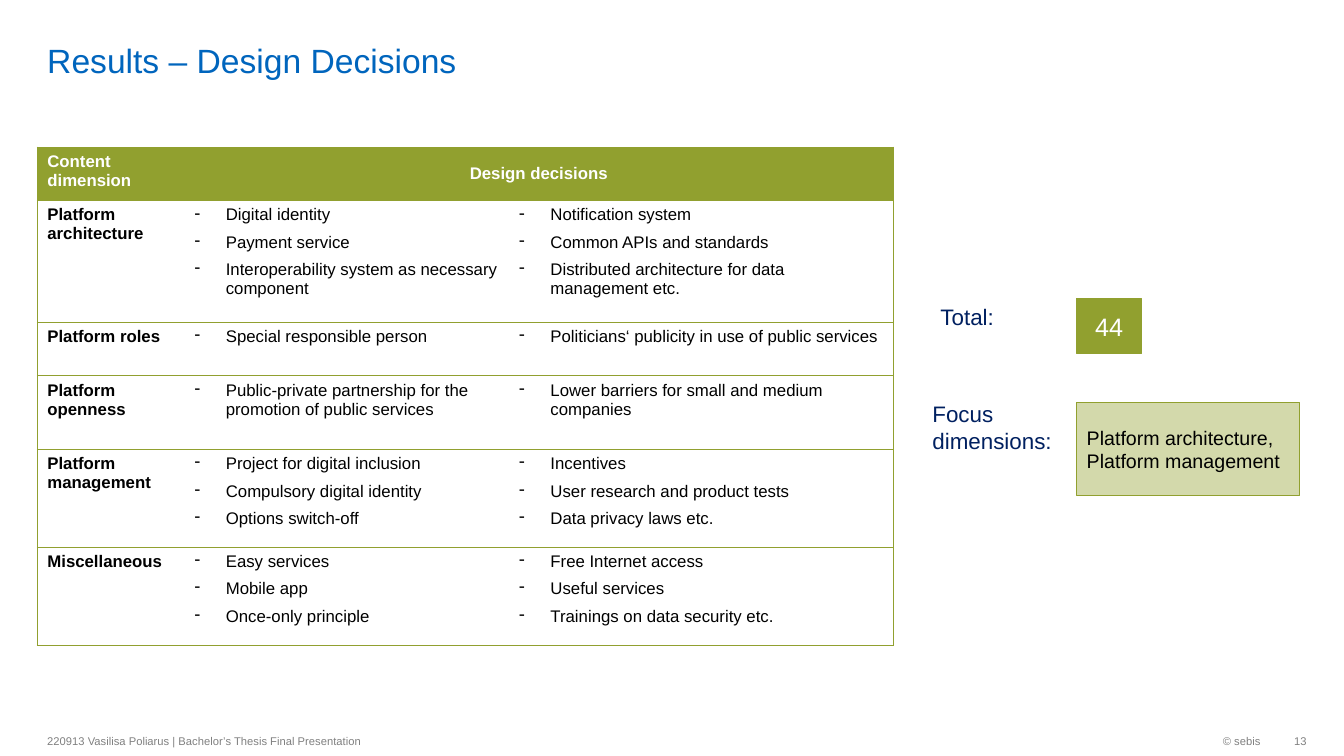
from lxml.etree import SubElement
from pptx import Presentation
from pptx.dml.color import RGBColor
from pptx.enum.shapes import MSO_SHAPE
from pptx.enum.text import MSO_ANCHOR as ANCHOR, PP_ALIGN as ALIGN
from pptx.oxml.ns import qn
from pptx.util import Inches, Pt

OLIVE, BLUE, NAVY, GRAY = "91A02F", "0065BD", "002060", "808080"
BLACK, WHITE = "000000", "FFFFFF"
NO_STYLE = "{2D5ABB26-0587-4C30-8999-92F81FD0307C}"
COLUMN_WIDTHS = [1.46, 3.22, 3.81]
ROW_HEIGHTS = [0.53, 1.21, 0.53, 0.73, 0.97, 0.97]
DECISIONS = [
    ("Platform architecture",
     ["Digital identity", "Payment service", "Interoperability system as necessary component"],
     ["Notification system", "Common APIs and standards",
      "Distributed architecture for data management etc."]),
    ("Platform roles",
     ["Special responsible person"],
     ["Politicians‘ publicity in use of public services"]),
    ("Platform openness",
     ["Public-private partnership for the promotion of public services"],
     ["Lower barriers for small and medium companies"]),
    ("Platform management",
     ["Project for digital inclusion", "Compulsory digital identity", "Options switch-off"],
     ["Incentives", "User research and product tests", "Data privacy laws etc."]),
    ("Miscellaneous",
     ["Easy services", "Mobile app", "Once-only principle"],
     ["Free Internet access", "Useful services", "Trainings on data security etc."]),
]


def rgb(color):
    return RGBColor.from_string(color)


def write(frame, lines, size, color, bold=False, align=ALIGN.LEFT, bulleted=False):
    for index, line in enumerate(lines):
        paragraph = frame.paragraphs[0] if index == 0 else frame.add_paragraph()
        paragraph.text = line
        paragraph.alignment = align
        if bulleted:
            paragraph.space_after = Pt(6)
            add_dash(paragraph)
        font = paragraph.runs[0].font
        formats = {"name": "Arial", "size": Pt(size), "bold": bold}
        for key, value in formats.items():
            setattr(font, key, value)
        font.color.rgb = rgb(color)


def add_dash(paragraph):
    properties = paragraph._p.get_or_add_pPr()
    properties.set("marL", str(Inches(0.31)))
    properties.set("indent", str(Inches(-0.31)))
    SubElement(properties, qn("a:buChar"), char="-")


def add_label(slide, place, lines, size, color, align=ALIGN.LEFT, wrap=True, **frame_format):
    frame = slide.shapes.add_textbox(*map(Inches, place)).text_frame
    frame.word_wrap = wrap
    for key, value in frame_format.items():
        setattr(frame, key, value)
    write(frame, lines, size, color, align=align)


def add_box(slide, place, lines, size, color, align=ALIGN.LEFT, opacity=100):
    box = slide.shapes.add_shape(MSO_SHAPE.RECTANGLE, *map(Inches, place))
    box.shadow.inherit = False
    box.fill.solid()
    box.fill.fore_color.rgb = rgb(OLIVE)
    if opacity < 100:
        tint = box.fill._xPr.find(qn("a:solidFill"))[0]
        SubElement(tint, qn("a:alpha"), val=str(opacity * 1000))
    box.line.color.rgb = rgb(OLIVE)
    box.line.width = Pt(0.75)
    box.text_frame.vertical_anchor = ANCHOR.MIDDLE
    box.text_frame.word_wrap = True
    write(box.text_frame, lines, size, color, align=align)


def add_borders(cell, sides):
    """Draw olive lines on the given sides, in the order L, R, T, B."""
    properties = cell._tc.get_or_add_tcPr()
    for side in sides:
        line = SubElement(properties, qn(f"a:ln{side}"), w=str(Pt(0.75)))
        fill = SubElement(line, qn("a:solidFill"))
        SubElement(fill, qn("a:srgbClr"), val=OLIVE)


def add_decision_table(slide):
    table = slide.shapes.add_table(
        len(ROW_HEIGHTS), len(COLUMN_WIDTHS), Inches(0.37), Inches(1.46),
        Inches(sum(COLUMN_WIDTHS)), Inches(sum(ROW_HEIGHTS))).table
    table._tbl.tblPr.find(qn("a:tableStyleId")).text = NO_STYLE
    table.horz_banding = False
    for column, width in zip(table.columns, COLUMN_WIDTHS):
        column.width = Inches(width)
    for row, height in zip(table.rows, ROW_HEIGHTS):
        row.height = Inches(height)

    heading = table.cell(0, 1)
    heading.merge(table.cell(0, 2))
    for row_index, row in enumerate(table.rows):
        for column_index, cell in enumerate(row.cells):
            left = "L" if column_index == 0 else ""
            right = "R" if column_index == 2 or cell.is_merge_origin else ""
            add_borders(cell, left + right + "TB")
            if row_index == 0:
                cell.fill.solid()
                cell.fill.fore_color.rgb = rgb(OLIVE)
            else:
                cell.fill.background()

    write(table.cell(0, 0).text_frame, ["Content dimension"], 12, WHITE, bold=True)
    write(heading.text_frame, ["Design decisions"], 12, WHITE, bold=True, align=ALIGN.CENTER)
    heading.vertical_anchor = ANCHOR.MIDDLE
    for row_index, (dimension, *decision_lists) in enumerate(DECISIONS, 1):
        write(table.cell(row_index, 0).text_frame, [dimension], 12, BLACK, bold=True)
        for column_index, decisions in enumerate(decision_lists, 1):
            write(table.cell(row_index, column_index).text_frame, decisions, 12, BLACK,
                  bulleted=True)


def add_summary(slide):
    add_label(slide, (9.23, 2.96, 0.74, 0.37), ["Total:"], 16, NAVY, wrap=False)
    add_box(slide, (10.68, 2.96, 0.64, 0.55), ["44"], 18, WHITE, align=ALIGN.CENTER)
    add_label(slide, (9.15, 3.92, 1.4, 0.64), ["Focus", "dimensions:"], 16, NAVY, wrap=False)
    add_box(slide, (10.68, 3.99, 2.21, 0.93),
            ["Platform architecture,", "Platform management"], 14, BLACK, opacity=40)


def add_footer(slide):
    middle = {"vertical_anchor": ANCHOR.MIDDLE}
    add_label(slide, (0.37, 7.19, 4.73, 0.32),
              ["220913 Vasilisa Poliarus | Bachelor’s Thesis Final Presentation"], 8, GRAY, **middle)
    add_label(slide, (10.26, 7.19, 2.34, 0.32), ["© sebis"], 8, GRAY, align=ALIGN.RIGHT, **middle)
    add_label(slide, (12.6, 7.19, 0.36, 0.32), ["13"], 8, GRAY, align=ALIGN.RIGHT,
              margin_right=0, **middle)


def main():
    presentation = Presentation()
    presentation.slide_width = Inches(13.33)
    presentation.slide_height = Inches(7.5)
    slide = presentation.slides.add_slide(presentation.slide_layouts[6])
    add_label(slide, (0.37, 0.01, 10.99, 0.79), ["Results – Design Decisions"], 24, BLUE,
              vertical_anchor=ANCHOR.BOTTOM, margin_top=0, margin_bottom=0)
    add_decision_table(slide)
    add_summary(slide)
    add_footer(slide)
    presentation.save("out.pptx")


if __name__ == "__main__":
    main()
